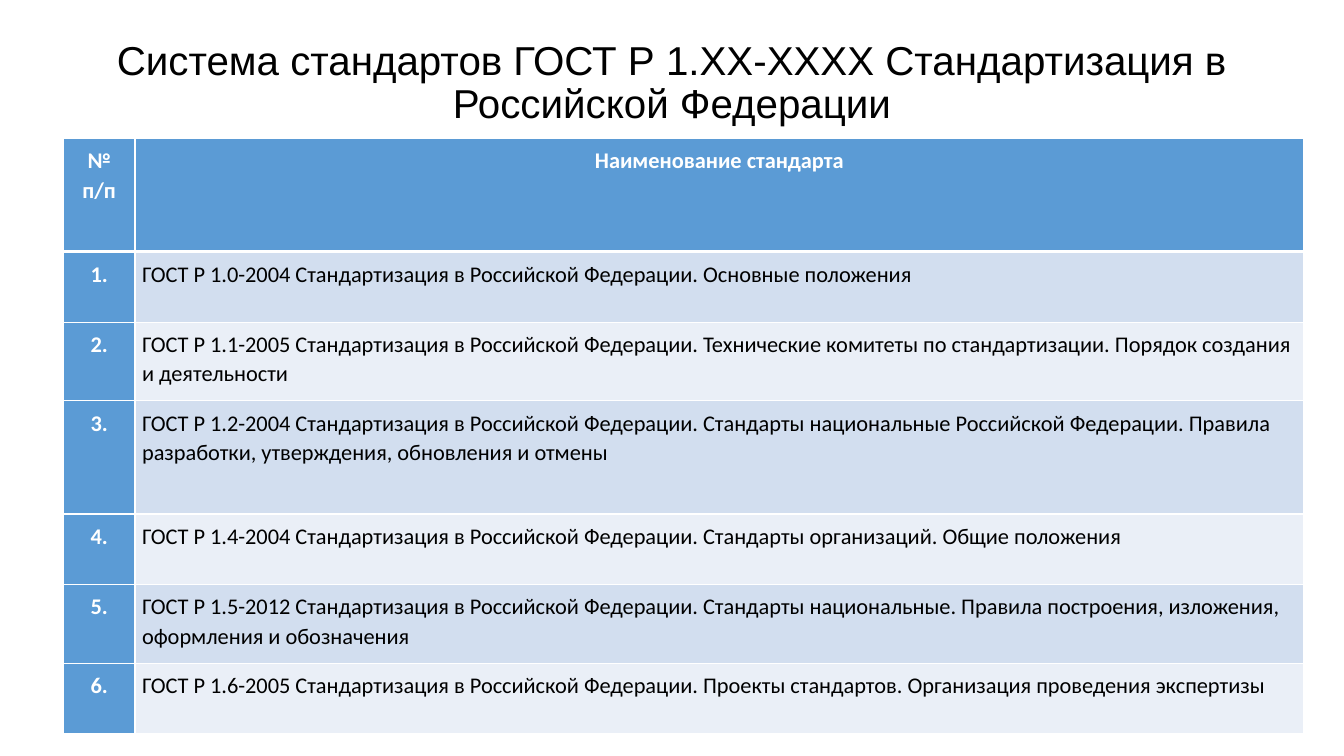
from dataclasses import dataclass

from lxml.etree import fromstring
from pptx import Presentation
from pptx.dml.color import RGBColor
from pptx.enum.text import MSO_ANCHOR, MSO_AUTO_SIZE, PP_ALIGN
from pptx.oxml.ns import nsdecls
from pptx.util import Cm, Pt

TITLE = "Система стандартов ГОСТ Р 1.ХХ-ХХХХ Стандартизация в Российской Федерации"
HEADINGS = (["№", "п/п"], ["Наименование стандарта"])
SERIES = "Стандартизация в Российской Федерации"
STANDARDS = [
    ("1.0-2004", "Основные положения", 1.78),
    ("1.1-2005", "Технические комитеты по стандартизации. Порядок создания и деятельности", 1.98),
    ("1.2-2004", "Стандарты национальные Российской Федерации. "
                 "Правила разработки, утверждения, обновления и отмены", 2.85),
    ("1.4-2004", "Стандарты организаций. Общие положения", 1.78),
    ("1.5-2012", "Стандарты национальные. Правила построения, изложения, оформления и обозначения", 1.98),
    ("1.6-2005", "Проекты стандартов. Организация проведения экспертизы", 1.78),
]
HEADER_HEIGHT = 2.85
COLUMN_WIDTHS = (1.8, 29.46)


@dataclass(frozen=True)
class Theme:
    title_font: str = "Arial"
    table_font: str = "Calibri"
    title_size: float = 28.8
    table_size: float = 16
    accent: str = "5B9BD5"
    bands: tuple = ("D2DEEF", "EAEFF7")
    dark: str = "000000"
    light: str = "FFFFFF"


THEME = Theme()


def write(frame, lines, font, size, color, bold, align, spacing):
    frame.word_wrap = True
    for index, line in enumerate(lines):
        para = frame.add_paragraph() if index else frame.paragraphs[0]
        para.alignment = align
        para.line_spacing = spacing
        span = para.add_run()
        span.text = line
        span.font.name = font
        span.font.size = Pt(size)
        span.font.bold = bold
        span.font.color.rgb = RGBColor.from_string(color)


def set_borders(cell, top, bottom):
    properties = cell._tc.get_or_add_tcPr()
    edges = (("lnL", 1), ("lnR", 1), ("lnT", top), ("lnB", bottom))
    for position, (edge, width) in enumerate(edges):
        properties.insert(position, fromstring(
            f'<a:{edge} {nsdecls("a")} w="{Pt(width)}"><a:solidFill>'
            f'<a:srgbClr val="{THEME.light}"/></a:solidFill></a:{edge}>'))


def fill_cell(cell, lines, fill, is_label, top, bottom):
    cell.margin_left = cell.margin_right = cell.margin_top = cell.margin_bottom = Cm(0.18)
    cell.vertical_anchor = MSO_ANCHOR.TOP
    cell.fill.solid()
    cell.fill.fore_color.rgb = RGBColor.from_string(fill)
    set_borders(cell, top, bottom)
    write(cell.text_frame, lines, THEME.table_font, THEME.table_size,
          THEME.light if is_label else THEME.dark, is_label,
          PP_ALIGN.CENTER if is_label else PP_ALIGN.LEFT, 1.07)


def add_title(page):
    title = page.shapes.title
    title.left, title.top, title.width, title.height = Cm(2.33), Cm(1.02), Cm(29.21), Cm(2.18)
    frame = title.text_frame
    frame.auto_size = MSO_AUTO_SIZE.NONE
    frame.vertical_anchor = MSO_ANCHOR.MIDDLE
    write(frame, [TITLE], THEME.title_font, THEME.title_size, THEME.dark, False, PP_ALIGN.CENTER, 0.9)


def add_standards(page):
    heights = [HEADER_HEIGHT] + [height for _, _, height in STANDARDS]
    table = page.shapes.add_table(len(heights), len(COLUMN_WIDTHS), Cm(1.6), Cm(3.49),
                                  Cm(sum(COLUMN_WIDTHS)), Cm(sum(heights))).table
    for column, width in zip(table.columns, COLUMN_WIDTHS):
        column.width = Cm(width)
    for row, height in zip(table.rows, heights):
        row.height = Cm(height)
    for column, lines in enumerate(HEADINGS):
        fill_cell(table.cell(0, column), lines, THEME.accent, True, 1, 3)
    for number, (code, name, _) in enumerate(STANDARDS, start=1):
        top = 3 if number == 1 else 1
        fill_cell(table.cell(number, 0), [f"{number}."], THEME.accent, True, top, 1)
        fill_cell(table.cell(number, 1), [f"ГОСТ Р {code} {SERIES}. {name}"],
                  THEME.bands[(number - 1) % 2], False, top, 1)


def main():
    """Build the slide listing the national standardization standards."""
    deck = Presentation()
    deck.slide_width, deck.slide_height = Cm(33.87), Cm(19.05)
    page = deck.slides.add_slide(deck.slide_layouts[5])
    add_title(page)
    add_standards(page)
    deck.save("out.pptx")


if __name__ == "__main__":
    main()
